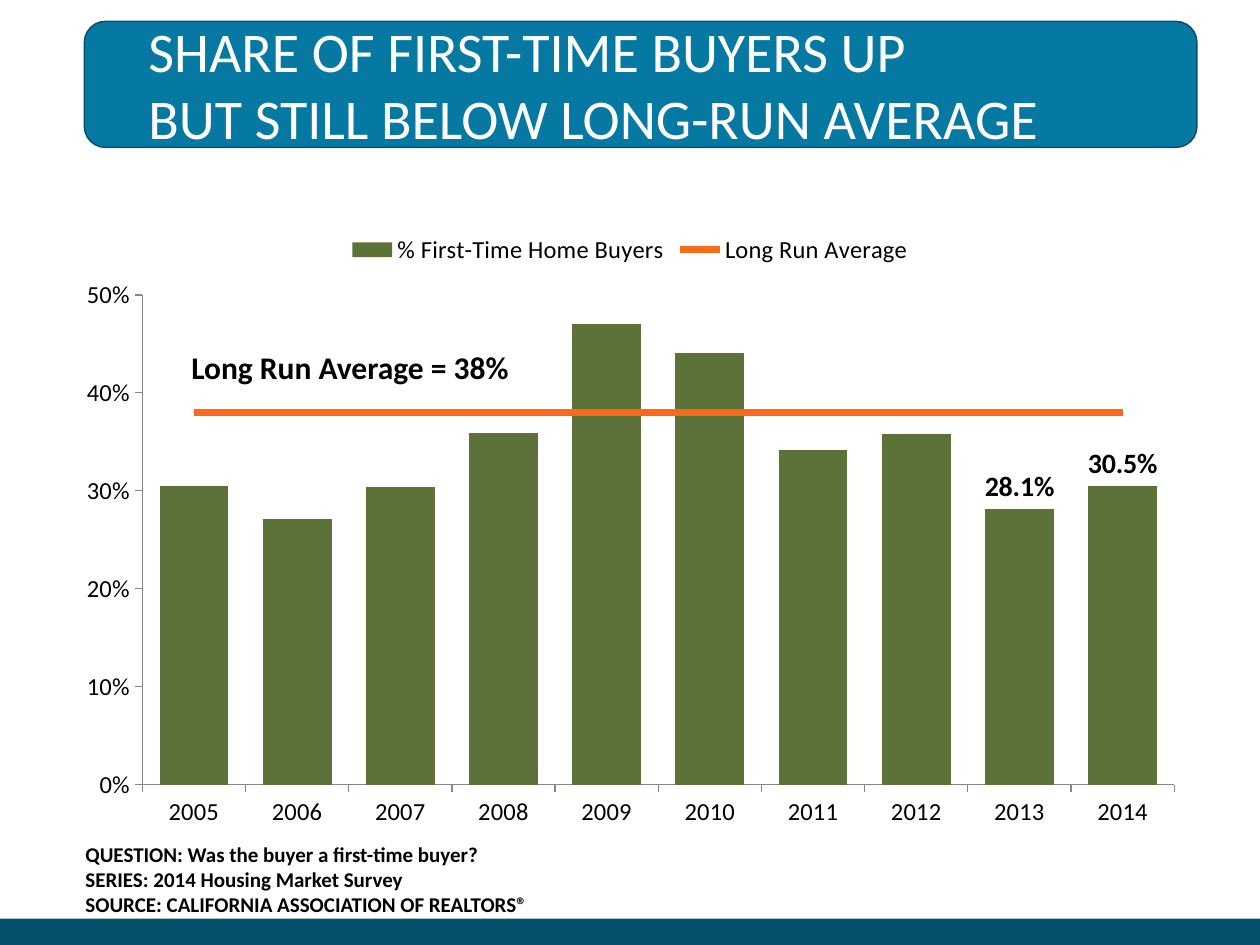
import pptx
import pptx.chart.data
import pptx.dml.color
import pptx.enum.chart
import pptx.enum.shapes
import pptx.enum.text
import pptx.oxml
import pptx.oxml.ns
import pptx.util
from pptx.util import Inches

COLORS = {
    "navy": "04516C",
    "teal": "0679A3",
    "green": "5D7238",
    "orange": "F96A1B",
    "axis": "868686",
    "black": "000000",
    "white": "FFFFFF",
}
FONT = "Calibri"
YEARS = [str(year) for year in range(2005, 2015)]
SHARES = [0.305, 0.271, 0.304, 0.359, 0.47, 0.441, 0.342, 0.358, 0.281, 0.305]
LONG_RUN_AVERAGE = 0.38
LABELLED_YEARS = ["2013", "2014"]


def rgb(name):
    """Return the named palette colour."""
    return pptx.dml.color.RGBColor.from_string(COLORS[name])


def style_font(font, size, color="black", bold=False):
    """Apply the slide's typeface with a size, colour and weight."""
    font.name = FONT
    font.size = pptx.util.Pt(size)
    font.bold = bold
    font.color.rgb = rgb(color)


def add_panel(page, kind, box, fill, line=None):
    """Add a flat filled shape with an optional outline."""
    panel = page.shapes.add_shape(kind, *map(Inches, box))
    panel.shadow.inherit = False
    panel.fill.solid()
    panel.fill.fore_color.rgb = rgb(fill)
    if line:
        panel.line.color.rgb = rgb(line)
        panel.line.width = pptx.util.Pt(0.85)
    else:
        panel.line.fill.background()


def add_text(page, box, lines, size, color="black", bold=False, wrap=False):
    """Add a text box with one paragraph per line."""
    frame = page.shapes.add_textbox(*map(Inches, box)).text_frame
    frame.word_wrap = wrap
    frame.vertical_anchor = pptx.enum.text.MSO_ANCHOR.TOP
    frame.text = "\n".join(lines)
    for para in frame.paragraphs:
        style_font(para.font, size, color, bold)


def add_header(page, box):
    """Draw the title banner and its heading."""
    left, top, width, height = box
    kind = pptx.enum.shapes.MSO_SHAPE.FLOWCHART_ALTERNATE_PROCESS
    add_panel(page, kind, box, "teal", "navy")
    heading = "SHARE OF FIRST-TIME BUYERS UP\vBUT STILL BELOW LONG-RUN AVERAGE"
    heading_box = (left + 0.41, top - 0.09, width - 0.25, 0.67)
    add_text(page, heading_box, [heading], 32, "white", wrap=True)


def move_to_line_plot(chart, series):
    """Move a column series into a line plot on the same axes."""
    bars = chart.plots[0]._element
    namespace = pptx.oxml.ns.nsdecls("c")
    lines = pptx.oxml.parse_xml(
        f'<c:lineChart {namespace}><c:grouping val="standard"/>'
        '<c:varyColors val="0"/><c:marker val="1"/></c:lineChart>'
    )
    element = series._element
    for child in element.findall(pptx.oxml.ns.qn("c:invertIfNegative")):
        element.remove(child)
    lines.insert(2, element)
    for axis in bars.findall(pptx.oxml.ns.qn("c:axId")):
        lines.append(pptx.oxml.parse_xml(
            f'<c:axId {namespace} val="{axis.get("val")}"/>'
        ))
    bars.addnext(lines)


def set_plot_area(chart, **fractions):
    """Fix the inner plot area as fractions of the chart."""
    area = chart._chartSpace.chart.plotArea
    for old in area.findall(pptx.oxml.ns.qn("c:layout")):
        area.remove(old)
    sizes = "".join(f'<c:{key} val="{value}"/>' for key, value in fractions.items())
    area.insert(0, pptx.oxml.parse_xml(
        f'<c:layout {pptx.oxml.ns.nsdecls("c")}><c:manualLayout>'
        '<c:layoutTarget val="inner"/><c:xMode val="edge"/><c:yMode val="edge"/>'
        f'{sizes}</c:manualLayout></c:layout>'
    ))


def style_axes(chart):
    """Set the scale, ticks and lines of both axes."""
    value_axis = chart.value_axis
    value_axis.minimum_scale = 0
    value_axis.maximum_scale = 0.5
    value_axis.major_unit = 0.1
    value_axis.has_major_gridlines = False
    value_axis.tick_labels.number_format = "0%"
    value_axis.tick_labels.number_format_is_linked = False
    for axis in (value_axis, chart.category_axis):
        axis.major_tick_mark = pptx.enum.chart.XL_TICK_MARK.OUTSIDE
        axis.format.line.color.rgb = rgb("axis")
        axis.format.line.width = pptx.util.Pt(0.75)


def add_buyer_chart(page, box):
    """Draw yearly buyer shares against the long-run average."""
    data = pptx.chart.data.CategoryChartData(number_format="0.0%")
    data.categories = YEARS
    data.add_series("% First-Time Home Buyers", SHARES)
    data.add_series("Long Run Average", [LONG_RUN_AVERAGE] * len(YEARS))
    kind = pptx.enum.chart.XL_CHART_TYPE.COLUMN_CLUSTERED
    chart = page.shapes.add_chart(kind, *map(Inches, box), data).chart
    style_font(chart.font, 14)
    chart.has_title = False
    chart.has_legend = True
    chart.legend.position = pptx.enum.chart.XL_LEGEND_POSITION.TOP
    chart.legend.include_in_layout = False
    style_axes(chart)

    plot = chart.plots[0]
    plot.gap_width = 50
    plot.vary_by_categories = False
    shares, average = plot.series
    shares.format.fill.solid()
    shares.format.fill.fore_color.rgb = rgb("green")
    shares.data_labels.show_value = False
    for year in LABELLED_YEARS:
        label = shares.points[YEARS.index(year)].data_label
        style_font(label.font, 16, bold=True)
        label.position = pptx.enum.chart.XL_LABEL_POSITION.OUTSIDE_END

    move_to_line_plot(chart, average)
    average = chart.plots[1].series[0]
    average.smooth = False
    average.marker.style = pptx.enum.chart.XL_MARKER_STYLE.NONE
    average.format.line.color.rgb = rgb("orange")
    average.format.line.width = pptx.util.Pt(4)
    set_plot_area(chart, x=0.07, y=0.12, w=0.91, h=0.79)

    left, top = box[:2]
    note = f"Long Run Average = {LONG_RUN_AVERAGE:.0%}"
    add_text(page, (left + 0.92, top + 0.96, 2.89, 0.4), [note], 18, bold=True)


def add_footer(page, box):
    """Draw the bottom band and the survey notes above it."""
    left, top, width, height = box
    add_panel(page, pptx.enum.shapes.MSO_SHAPE.RECTANGLE, box, "navy")
    notes = [
        "QUESTION: Was the buyer a first-time buyer?",
        "SERIES: 2014 Housing Market Survey",
        "SOURCE: CALIFORNIA ASSOCIATION OF REALTORS®",
    ]
    add_text(page, (left + 0.58, top - 0.66, 4.2, 0.71), notes, 12, bold=True)


def main():
    """Build and save the slide."""
    deck = pptx.Presentation()
    deck.slide_width = Inches(10)
    deck.slide_height = Inches(7.5)
    page = deck.slides.add_slide(deck.slide_layouts[6])
    add_header(page, (0.67, 0.17, 8.83, 1))
    add_buyer_chart(page, (0.5, 1.75, 9, 4.92))
    add_footer(page, (0, 7.29, 10, 0.21))
    deck.save("out.pptx")


if __name__ == "__main__":
    main()
